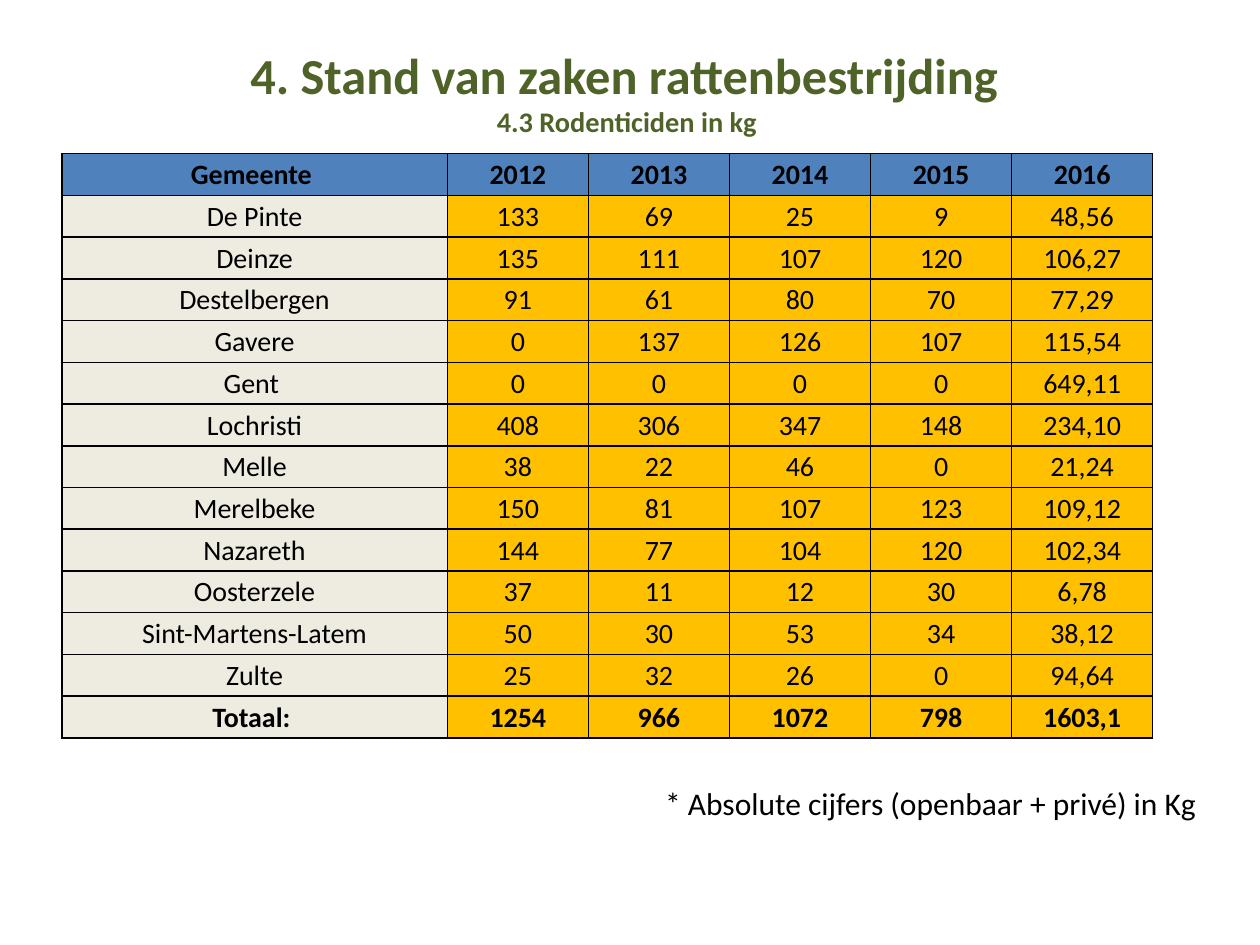
"""Build the slide with rodenticide use in kg per municipality, 2012-2016."""
from lxml.etree import SubElement
from pptx import Presentation
from pptx.dml.color import RGBColor as RGB
from pptx.enum.text import MSO_ANCHOR as ANCHOR, PP_ALIGN as ALIGN
from pptx.oxml.ns import qn
from pptx.util import Inches, Pt

COLORS = {"title": "4F6228", "text": "000000", "border": "000000",
          "header": "4F81BD", "label": "EEECE1", "value": "FFC000"}

ROWS = [
    ("Gemeente ", "2012", "2013", "2014", "2015", "2016"),
    ("De Pinte", "133", "69", "25", "9", "48,56"),
    ("Deinze", "135", "111", "107", "120", "106,27"),
    ("Destelbergen", "91", "61", "80", "70", "77,29"),
    ("Gavere", "0", "137", "126", "107", "115,54"),
    ("Gent ", "0", "0", "0", "0", "649,11"),
    ("Lochristi", "408", "306", "347", "148", "234,10"),
    ("Melle", "38", "22", "46", "0", "21,24"),
    ("Merelbeke", "150", "81", "107", "123", "109,12"),
    ("Nazareth", "144", "77", "104", "120", "102,34"),
    ("Oosterzele", "37", "11", "12", "30", "6,78"),
    ("Sint-Martens-Latem", "50", "30", "53", "34", "38,12"),
    ("Zulte", "25", "32", "26", "0", "94,64"),
    ("Totaal: ", "1254", "966", "1072", "798", "1603,1"),
]


def add_run(p, text, size, color="text", bold=False):
    r = p.add_run()
    r.text = text
    r.font.name = "Calibri"
    r.font.size = Pt(size)
    r.font.bold = bold
    r.font.color.rgb = RGB.from_string(COLORS[color])


def add_border(cell):
    tc_pr = cell._tc.get_or_add_tcPr()
    for side in ("lnL", "lnR", "lnT", "lnB"):
        ln = SubElement(tc_pr, qn(f"a:{side}"), w=str(Pt(1)))
        fill = SubElement(ln, qn("a:solidFill"))
        SubElement(fill, qn("a:srgbClr"), val=COLORS["border"])


prs = Presentation()
prs.slide_width, prs.slide_height = Inches(10), Inches(7.5)
W, H = prs.slide_width, prs.slide_height
s = prs.slides.add_slide(prs.slide_layouts[6])

title = s.shapes.add_textbox(int(W * 0.05), int(H * 0.04), int(W * 0.9), int(H * 0.12))
tf = title.text_frame
tf.word_wrap = True
p = tf.paragraphs[0]
p.alignment = ALIGN.CENTER
add_run(p, "4. Stand van zaken rattenbestrijding ", 28.8, "title", True)
p.add_line_break()
add_run(p, "4.3 Rodenticiden in kg ", 16.2, "title", True)

row_h = Inches(4.64 / len(ROWS))
label_w, year_w = Inches(3.06), Inches(1.12)
years = len(ROWS[0]) - 1
frame = s.shapes.add_table(len(ROWS), years + 1, Inches(0.49), Inches(1.22),
                           label_w + years * year_w, row_h * len(ROWS))
table = frame.table
table.first_row = table.horz_banding = False
for i, col in enumerate(table.columns):
    col.width = year_w if i else label_w

for i, row in enumerate(ROWS):
    table.rows[i].height = row_h
    for j, text in enumerate(row):
        cell = table.cell(i, j)
        add_border(cell)
        cell.fill.solid()
        kind = "header" if i == 0 else "value" if j else "label"
        cell.fill.fore_color.rgb = RGB.from_string(COLORS[kind])
        cell.margin_left = cell.margin_right = cell.margin_top = Inches(0.01)
        cell.margin_bottom = 0
        cell.vertical_anchor = ANCHOR.MIDDLE
        p = cell.text_frame.paragraphs[0]
        p.alignment = ALIGN.CENTER
        add_run(p, text, 16, bold=i in (0, len(ROWS) - 1))

note = s.shapes.add_textbox(Inches(5.18), Inches(5.56), Inches(4.82), Inches(1.01))
tf = note.text_frame
tf.word_wrap = True
tf.vertical_anchor = ANCHOR.BOTTOM
add_run(tf.paragraphs[0], "* Absolute cijfers (openbaar + privé) in Kg", 18)

prs.save("out.pptx")
